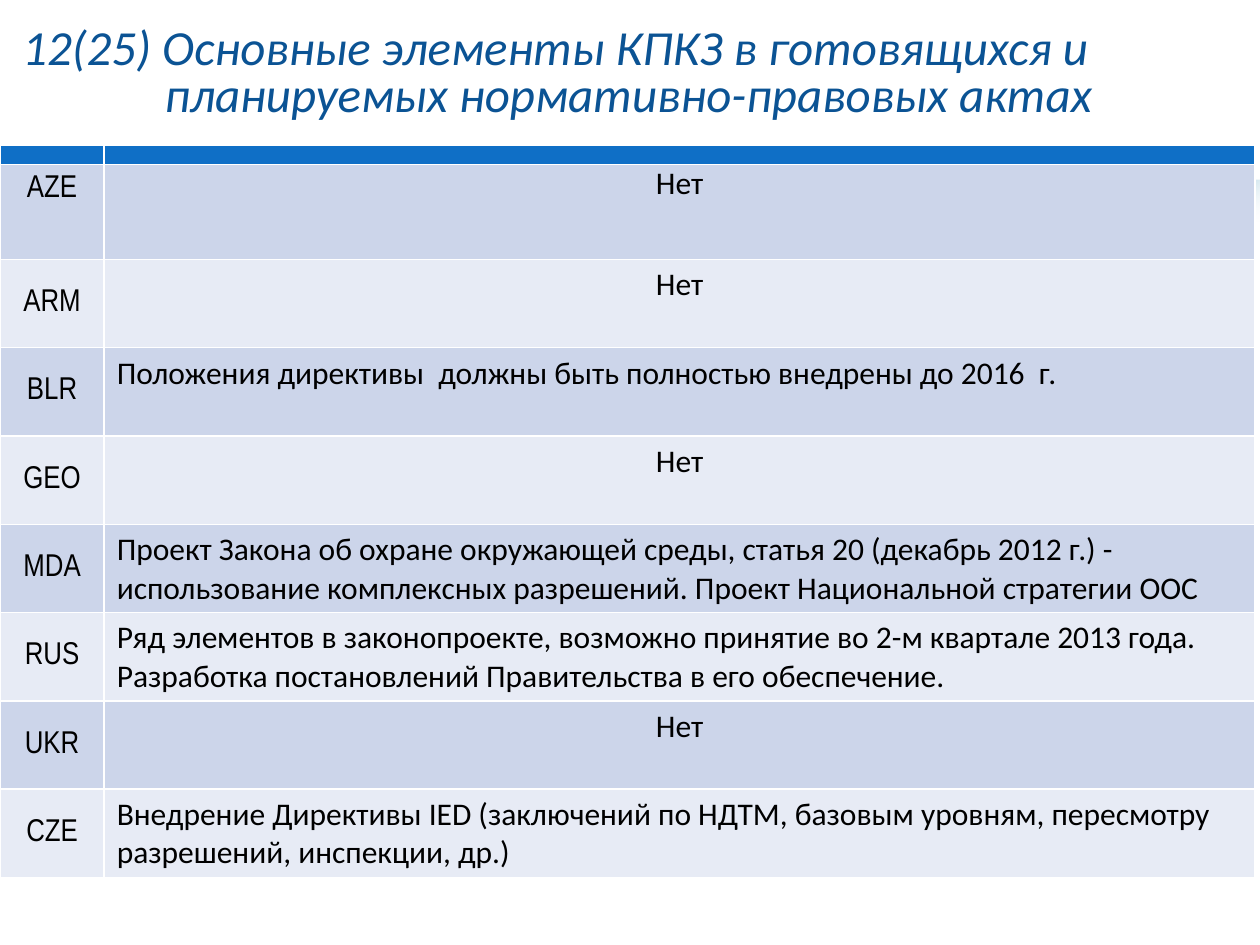
from dataclasses import dataclass

from lxml.etree import SubElement
from pptx import Presentation
from pptx.dml.color import RGBColor
from pptx.enum.shapes import MSO_SHAPE
from pptx.enum.text import MSO_ANCHOR, PP_ALIGN
from pptx.oxml.ns import qn
from pptx.util import Cm, Pt


@dataclass(frozen=True)
class Theme:
    white: RGBColor = RGBColor.from_string("FFFFFF")
    title: RGBColor = RGBColor.from_string("0B5394")
    text: RGBColor = RGBColor.from_string("000000")
    header: RGBColor = RGBColor.from_string("0F6FC6")
    bands: tuple = (RGBColor.from_string("CCD5EA"), RGBColor.from_string("E7EBF5"))
    shadow: str = "0076A3"
    font: str = "Calibri"
    code_font: str = "Arial Narrow"
    title_size: Pt = Pt(28)
    body_size: Pt = Pt(18)


@dataclass(frozen=True)
class Country:
    code: str
    plans: str = "Нет"

    @property
    def alignment(self):
        return PP_ALIGN.CENTER if self.plans == "Нет" else PP_ALIGN.LEFT


THEME = Theme()
TITLE = "12(25) Основные элементы КПКЗ в готовящихся и\vпланируемых нормативно-правовых актах"
COUNTRIES = [
    Country("AZE"),
    Country("ARM"),
    Country("BLR", "Положения директивы  должны быть полностью внедрены до 2016  г."),
    Country("GEO"),
    Country("MDA", "Проект Закона об охране окружающей среды, статья 20 (декабрь 2012 г.) - "
                   "использование комплексных разрешений. Проект Национальной стратегии ООС"),
    Country("RUS", "Ряд элементов в законопроекте, возможно принятие во 2-м квартале 2013 года. "
                   "Разработка постановлений Правительства в его обеспечение."),
    Country("UKR"),
    Country("CZE", "Внедрение Директивы IED (заключений по НДТМ, базовым уровням, пересмотру "
                   "разрешений, инспекции, др.)"),
]


def format_runs(paragraph, name: str, size: Pt, color: RGBColor, italic: bool = False) -> None:
    for run in paragraph.runs:
        run.font.name, run.font.size, run.font.italic = name, size, italic
        run.font.color.rgb = color


def set_margins(cell, left, top, right, bottom) -> None:
    cell.margin_left, cell.margin_top = left, top
    cell.margin_right, cell.margin_bottom = right, bottom


def fill_cell(cell, color: RGBColor) -> None:
    cell.fill.solid()
    cell.fill.fore_color.rgb = color


def add_backdrop(slide) -> None:
    """Draw the white wavy panel with its soft shadow."""
    panel = slide.shapes.add_shape(MSO_SHAPE.FLOWCHART_DOCUMENT, 0, 0, Cm(25.4), Cm(4.52))
    panel.fill.solid()
    panel.fill.fore_color.rgb = THEME.white
    panel.line.fill.background()
    panel.shadow.inherit = False
    effects = panel._element.spPr.find(qn("a:effectLst"))
    shadow = SubElement(effects, qn("a:outerShdw"), blurRad=str(Pt(22)), dist=str(Pt(3)),
                        dir="5400000", algn="t", rotWithShape="0")
    color = SubElement(shadow, qn("a:srgbClr"), val=THEME.shadow)
    SubElement(color, qn("a:alpha"), val="40000")


def add_title(slide) -> None:
    frame = slide.shapes.add_textbox(Cm(0.2), Cm(0.33), Cm(25.1), Cm(2.36)).text_frame
    frame.word_wrap = True
    frame.vertical_anchor = MSO_ANCHOR.MIDDLE
    frame.text = TITLE
    paragraph = frame.paragraphs[0]
    paragraph.line_spacing = 0.8
    hanging = Cm(2.87)
    properties = paragraph._p.get_or_add_pPr()
    properties.set("marL", str(hanging))
    properties.set("indent", str(-hanging))
    format_runs(paragraph, THEME.font, THEME.title_size, THEME.title, italic=True)


def write_cell(cell, text: str, font: str, alignment, anchor) -> None:
    cell.text_frame.text = text
    cell.vertical_anchor = anchor
    paragraph = cell.text_frame.paragraphs[0]
    paragraph.alignment = alignment
    format_runs(paragraph, font, THEME.body_size, THEME.text)


def add_country_table(slide) -> None:
    header_height, first_height, row_height = Cm(0.4), Cm(1.9), Cm(1.78)
    table = slide.shapes.add_table(len(COUNTRIES) + 1, 2, 0, Cm(2.92), Cm(25.3), Cm(14.78)).table
    table.columns[0].width, table.columns[1].width = Cm(2.1), Cm(23.2)
    for row in table.rows:
        row.height = row_height
    table.rows[0].height, table.rows[1].height = header_height, first_height

    for cell in table.rows[0].cells:
        fill_cell(cell, THEME.header)
        set_margins(cell, 0, 0, 0, 0)
        # A tiny empty line keeps the header strip thin.
        SubElement(cell.text_frame.paragraphs[0]._p, qn("a:endParaRPr"), sz="100")

    for index, country in enumerate(COUNTRIES):
        code, plans = table.rows[index + 1].cells
        for cell in (code, plans):
            fill_cell(cell, THEME.bands[index % 2])
        write_cell(code, country.code, THEME.code_font, PP_ALIGN.CENTER, MSO_ANCHOR.MIDDLE)
        write_cell(plans, country.plans, THEME.font, country.alignment, MSO_ANCHOR.TOP)

    # The first country sits close to the header strip.
    table.cell(1, 0).margin_bottom = Cm(1.02)
    set_margins(table.cell(1, 1), Cm(0.05), 0, Cm(0.05), 0)


def main() -> None:
    presentation = Presentation()
    presentation.slide_width, presentation.slide_height = Cm(25.4), Cm(19.05)
    slide = presentation.slides.add_slide(presentation.slide_layouts[6])
    add_backdrop(slide)
    add_title(slide)
    add_country_table(slide)
    presentation.save("out.pptx")


if __name__ == "__main__":
    main()
